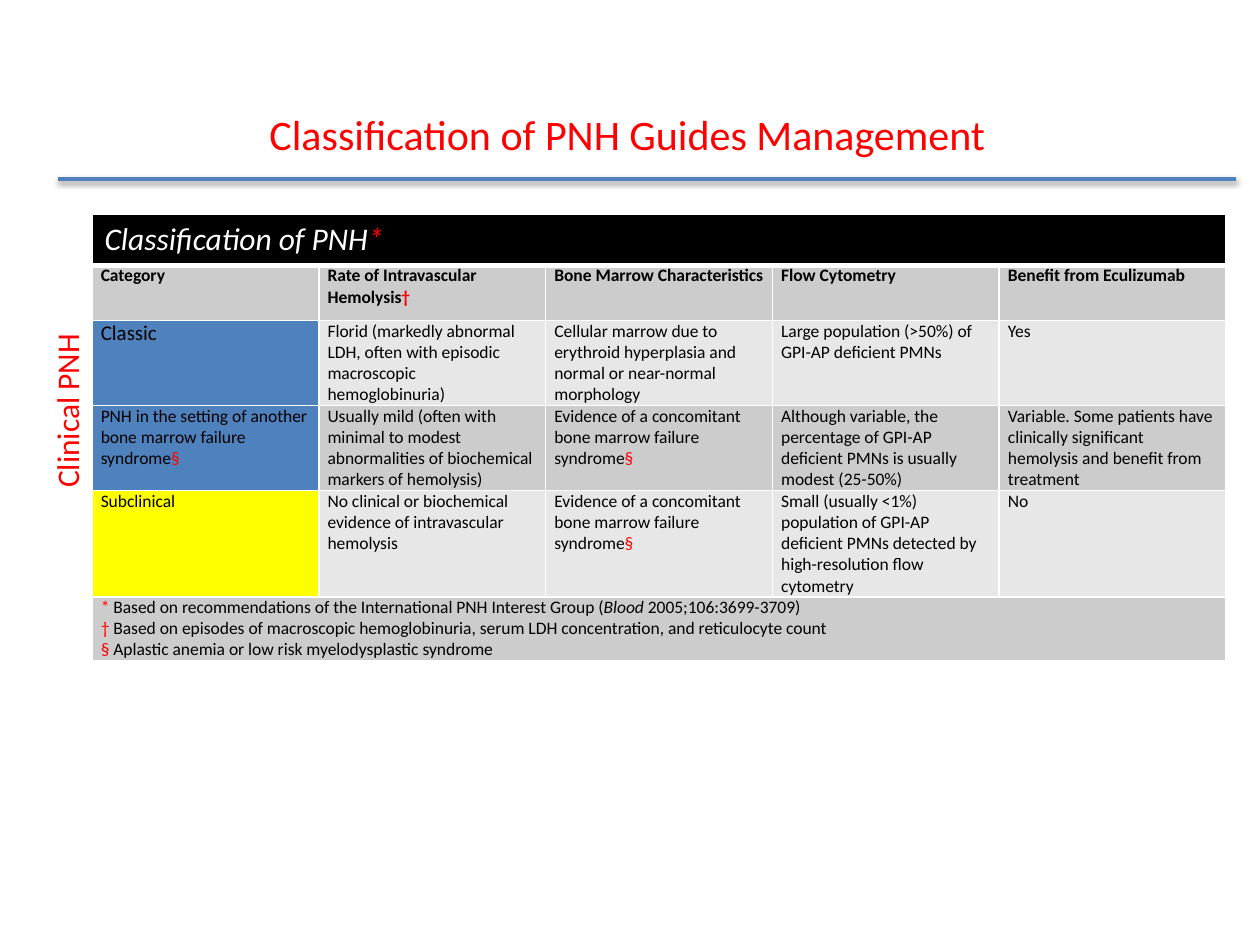
from dataclasses import dataclass

from lxml.etree import SubElement
from pptx import Presentation
from pptx.dml.color import RGBColor
from pptx.enum.shapes import MSO_CONNECTOR
from pptx.oxml.ns import qn
from pptx.util import Inches, Pt


@dataclass(frozen=True)
class Theme:
    font: str = "Calibri"
    accent: str = "FF0000"
    ink: str = "000000"
    paper: str = "FFFFFF"
    blue: str = "4F81BD"
    yellow: str = "FFFF00"
    band_dark: str = "CCCCCC"
    band_light: str = "E7E7E7"
    title_size: int = 24
    heading_size: int = 18
    lead_size: int = 12
    body_size: int = 10


@dataclass(frozen=True)
class Run:
    text: str
    accent: bool = False
    italic: bool = False


class Sheet:
    """Places elements on a grid of 100 columns by 75 rows."""

    def __init__(self, prs, theme):
        self.theme = theme
        self.slide = prs.slides.add_slide(prs.slide_layouts[6])
        self.column = prs.slide_width / 100
        self.row = prs.slide_height / 75

    def box(self, left, top, width, height):
        return (round(left * self.column), round(top * self.row),
                round(width * self.column), round(height * self.row))

    def add_runs(self, paragraph, runs, size, color, bold=False, italic=False):
        for part in runs:
            run = paragraph.add_run()
            run.text = part.text
            run.font.name = self.theme.font
            run.font.size = Pt(size)
            run.font.bold = bold
            run.font.italic = italic or part.italic
            run.font.color.rgb = RGBColor.from_string(
                self.theme.accent if part.accent else color)

    def label(self, text, place, size, rotation=0):
        label = self.slide.shapes.add_textbox(*self.box(*place))
        label.rotation = rotation
        label.text_frame.word_wrap = True
        self.add_runs(label.text_frame.paragraphs[0], [Run(text)], size, self.theme.accent)

    def rule(self, left, right, row):
        x, y, length, _ = self.box(left, row, right - left, 0)
        rule = self.slide.shapes.add_connector(MSO_CONNECTOR.STRAIGHT, x, y, x + length, y)
        rule.line.color.rgb = RGBColor.from_string(self.theme.blue)
        rule.line.width = Pt(2)
        effects = SubElement(rule._element.spPr, qn("a:effectLst"))
        shadow = SubElement(effects, qn("a:outerShdw"), blurRad=str(Pt(3.1)),
                            dist=str(Pt(1.6)), dir="5400000", rotWithShape="0")
        shade = SubElement(shadow, qn("a:srgbClr"), val=self.theme.ink)
        SubElement(shade, qn("a:alpha"), val="38000")

    def table(self, place, columns, row_heights):
        left, top, width, height = self.box(*place, sum(row_heights))
        table = self.slide.shapes.add_table(
            len(row_heights), columns, left, top, width, height).table
        table.first_row = table.horz_banding = False
        for row, row_height in zip(table.rows, row_heights):
            row.height = round(row_height * self.row)
        return table

    def borders(self, cell, bottom=1):
        properties = cell._tc.get_or_add_tcPr()
        for side, points in (("L", 1), ("R", 1), ("T", 1), ("B", bottom)):
            line = SubElement(properties, qn(f"a:ln{side}"), w=str(Pt(points)))
            fill = SubElement(line, qn("a:solidFill"))
            SubElement(fill, qn("a:srgbClr"), val=self.theme.paper)

    def cell(self, cell, paragraphs, fill, size=None, color=None, compact=True, **style):
        if compact:
            cell.margin_left = cell.margin_right = Inches(0.07)
            cell.margin_top = cell.margin_bottom = 0
        cell.fill.solid()
        cell.fill.fore_color.rgb = RGBColor.from_string(fill)
        frame = cell.text_frame
        for index, runs in enumerate(paragraphs):
            paragraph = frame.add_paragraph() if index else frame.paragraphs[0]
            self.add_runs(paragraph, runs, size or self.theme.body_size,
                          color or self.theme.ink, **style)


def noted(text, mark):
    return [Run(text), Run(mark, accent=True)]


def footnote(mark, *runs):
    return [Run(mark, accent=True), *runs]


MARROW_FAILURE = noted("Evidence of a concomitant bone marrow failure syndrome", "§")

HEADINGS = ["Category", noted("Rate of Intravascular Hemolysis", "†"),
            "Bone Marrow Characteristics", "Flow Cytometry", "Benefit from Eculizumab"]

CATEGORIES = [
    ["Classic",
     "Florid (markedly abnormal LDH, often with episodic macroscopic hemoglobinuria)",
     "Cellular marrow due to erythroid hyperplasia and normal or near-normal morphology",
     "Large population (>50%) of GPI-AP deficient PMNs",
     "Yes"],
    [noted("PNH in the setting of another bone marrow failure syndrome", "§"),
     "Usually mild (often with minimal to modest abnormalities of biochemical "
     "markers of hemolysis)",
     MARROW_FAILURE,
     "Although variable, the percentage of GPI-AP deficient PMNs is usually modest (25-50%)",
     "Variable. Some patients have clinically significant hemolysis and benefit "
     "from treatment"],
    ["Subclinical",
     "No clinical or biochemical evidence of intravascular hemolysis",
     MARROW_FAILURE,
     "Small (usually <1%) population of GPI-AP deficient PMNs detected by "
     "high-resolution flow cytometry",
     "No"],
]

FOOTNOTES = [
    footnote("*", Run(" Based on recommendations of the International PNH Interest Group ("),
             Run("Blood", italic=True), Run(" 2005;106:3699-3709)")),
    footnote("†", Run(" Based on episodes of macroscopic hemoglobinuria, serum LDH "
                      "concentration, and reticulocyte count")),
    footnote("§", Run(" Aplastic anemia or low risk myelodysplastic syndrome")),
]


def classification(sheet):
    theme = sheet.theme
    table = sheet.table((7.3, 17, 90), len(HEADINGS), [4, 4.4, 6.7, 6.7, 8.4, 5])
    last_row, last_column = len(table.rows) - 1, len(HEADINGS) - 1
    for row in range(last_row + 1):
        for column in range(last_column + 1):
            sheet.borders(table.cell(row, column), bottom=1 if row else 3)

    # Full-width banner and footnotes
    for row in (0, last_row):
        table.cell(row, 0).merge(table.cell(row, last_column))
    sheet.cell(table.cell(0, 0), [noted("Classification of PNH", "*")], theme.ink,
               theme.heading_size, theme.paper, compact=False, italic=True)
    sheet.cell(table.cell(last_row, 0), FOOTNOTES, theme.band_dark)

    # Headings and categories, in alternating bands
    category_fills = [theme.band_dark, theme.blue, theme.blue, theme.yellow]
    for row, entries in enumerate([HEADINGS, *CATEGORIES], start=1):
        band = theme.band_dark if row % 2 else theme.band_light
        for column, entry in enumerate(entries):
            runs = [Run(entry)] if isinstance(entry, str) else entry
            sheet.cell(table.cell(row, column), [runs],
                       band if column else category_fills[row - 1],
                       theme.lead_size if entry == "Classic" else theme.body_size,
                       bold=row == 1)


def main():
    prs = Presentation()
    prs.slide_width, prs.slide_height = Inches(10), Inches(7.5)
    sheet = Sheet(prs, Theme())

    # Classification table with its side label
    classification(sheet)
    sheet.label("Clinical PNH", (-2.4, 30, 15.4, 4), sheet.theme.heading_size, rotation=270)

    # Title and rule
    sheet.label("Classification of PNH Guides Management", (20.4, 8.1, 61.2, 5),
                sheet.theme.title_size)
    sheet.rule(4.6, 98.1, 14.2)

    prs.save("out.pptx")


if __name__ == "__main__":
    main()
